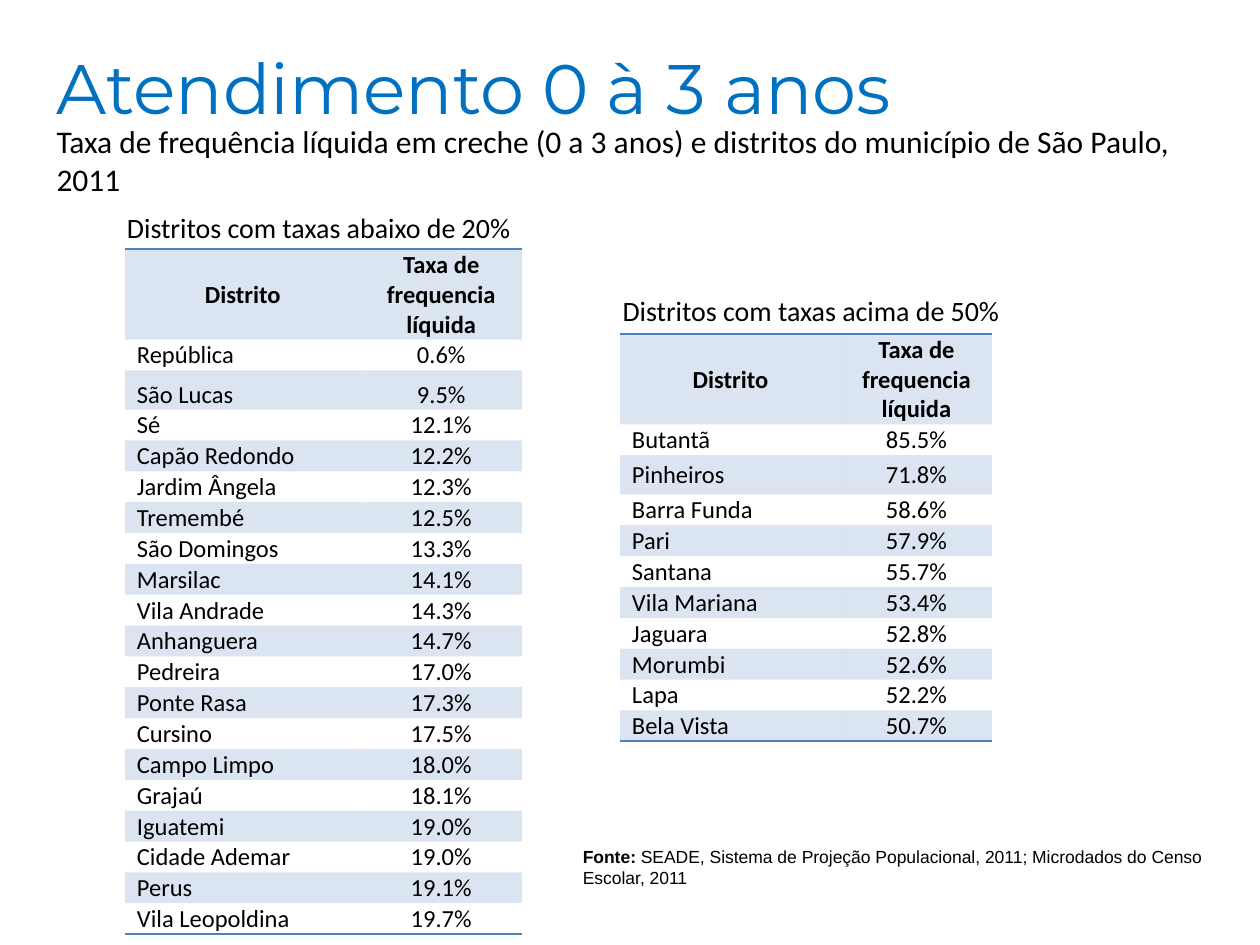
"""Build the slide on nursery attendance rates (0 to 3 years) by district of São Paulo."""
from lxml import etree
from pptx import Presentation
from pptx.dml.color import RGBColor
from pptx.enum.text import MSO_ANCHOR, MSO_AUTO_SIZE, PP_ALIGN
from pptx.oxml import parse_xml
from pptx.oxml.ns import nsdecls, qn
from pptx.util import Cm, Pt

LEFT, CENTER = PP_ALIGN.LEFT, PP_ALIGN.CENTER
MIDDLE, BOTTOM = MSO_ANCHOR.MIDDLE, MSO_ANCHOR.BOTTOM
NO_AUTOFIT = MSO_AUTO_SIZE.NONE
PLAIN_STYLE = "{2D5ABB26-0587-4C30-8999-92F81FD0307C}"
BLACK, TITLE_BLUE, TABLE_BLUE = "000000", "0070C0", "4F81BD"


def set_font(paragraph, name, size, colour, bold=False):
    font = paragraph.font
    font.name, font.size, font.bold = name, Pt(size), bold
    font.color.rgb = RGBColor.from_string(colour)


def add_label(left, top, width, height, text, name, size):
    box = slide.shapes.add_textbox(Cm(left), Cm(top), Cm(width), Cm(height))
    box.text_frame.word_wrap = True
    paragraph = box.text_frame.paragraphs[0]
    paragraph.text = text
    set_font(paragraph, name, size, BLACK)
    return box.text_frame


low_rates = [
    ("República", "0.6%"), ("São Lucas", "9.5%"), ("Sé", "12.1%"),
    ("Capão Redondo", "12.2%"), ("Jardim Ângela", "12.3%"), ("Tremembé", "12.5%"),
    ("São Domingos", "13.3%"), ("Marsilac", "14.1%"), ("Vila Andrade", "14.3%"),
    ("Anhanguera", "14.7%"), ("Pedreira", "17.0%"), ("Ponte Rasa", "17.3%"),
    ("Cursino", "17.5%"), ("Campo Limpo", "18.0%"), ("Grajaú", "18.1%"),
    ("Iguatemi", "19.0%"), ("Cidade Ademar", "19.0%"), ("Perus", "19.1%"),
    ("Vila Leopoldina", "19.7%"),
]
high_rates = [
    ("Butantã", "85.5%"), ("Pinheiros", "71.8%"), ("Barra Funda", "58.6%"),
    ("Pari", "57.9%"), ("Santana", "55.7%"), ("Vila Mariana", "53.4%"),
    ("Jaguara", "52.8%"), ("Morumbi", "52.6%"), ("Lapa", "52.2%"),
    ("Bela Vista", "50.7%"),
]
header = ("Distrito", "Taxa de frequencia líquida")
rate_tables = [
    (low_rates, 2.52, 5.02, (4.75, 3.25), 1.4, 0.58, BOTTOM),
    (high_rates, 12.5, 6.73, (4.45, 3.05), 1.27, 0.53, MIDDLE),
]

prs = Presentation()
prs.slide_width, prs.slide_height = Cm(25.4), Cm(19.05)
slide = prs.slides.add_slide(prs.slide_layouts[5])

for rates, left, top, widths, header_height, row_height, anchor in rate_tables:
    rows = [header] + rates
    heights = [header_height, row_height, 0.79] + [row_height] * (len(rows) - 3)
    table = slide.shapes.add_table(
        len(rows), 2, Cm(left), Cm(top), Cm(sum(widths)), Cm(sum(heights))).table
    table.first_row = table.horz_banding = False
    table._tbl.tblPr.find(qn("a:tableStyleId")).text = PLAIN_STYLE
    for column, width in zip(table.columns, widths):
        column.width = Cm(width)
    for r, row in enumerate(rows):
        table.rows[r].height = Cm(heights[r])
        for c, text in enumerate(row):
            is_header = r == 0
            is_name = c == 0 and not is_header
            cell = table.cell(r, c)
            cell.text = text
            cell.vertical_anchor = MIDDLE if is_header else anchor
            cell.margin_left = Cm(0.24 if is_name else 0.02)
            cell.margin_right = cell.margin_top = Cm(0.02)
            cell.margin_bottom = 0
            paragraph = cell.text_frame.paragraphs[0]
            paragraph.alignment = LEFT if is_name else CENTER
            set_font(paragraph, "Calibri", 14, BLACK, is_header)
            properties = cell._tc.get_or_add_tcPr()
            if r % 2 == 0:
                cell.fill.solid()
                cell.fill.fore_color.rgb = RGBColor.from_string(TABLE_BLUE)
                tint = properties.find(qn("a:solidFill"))[0]
                etree.SubElement(tint, qn("a:alpha")).set("val", "20000")
            else:
                cell.fill.background()
            if r in (0, len(rows) - 1):
                edge = "lnT" if is_header else "lnB"
                properties.insert(0, parse_xml(
                    f'<a:{edge} {nsdecls("a")} w="12700"><a:solidFill>'
                    f'<a:srgbClr val="{TABLE_BLUE}"/></a:solidFill></a:{edge}>'))

add_label(0.89, 2.34, 23.4, 1.8,
          "Taxa de frequência líquida em creche (0 a 3 anos) e distritos do município "
          "de São Paulo, 2011", "Calibri", 18)
source = add_label(11.5, 16.92, 13.2, 1.12, "Fonte:", "Arial", 10)
source.vertical_anchor = MIDDLE
source.paragraphs[0].runs[0].font.bold = True
source.paragraphs[0].add_run().text = (
    " SEADE, Sistema de Projeção Populacional, 2011; Microdados do Censo Escolar, 2011")
add_label(2.31, 4.11, 8.6, 0.94, "Distritos com taxas abaixo de 20%", "Calibri", 16)
add_label(12.3, 5.79, 8.6, 0.94, "Distritos com taxas acima de 50%", "Calibri", 16)

title = slide.shapes.title
title.left, title.top, title.width, title.height = Cm(0.89), Cm(0.76), Cm(22.86), Cm(1.96)
title.text_frame.text = "Atendimento 0 à 3 anos"
title.text_frame.auto_size = NO_AUTOFIT
title.text_frame.vertical_anchor = MIDDLE
title.text_frame.paragraphs[0].alignment = LEFT
set_font(title.text_frame.paragraphs[0], "Montserrat", 40, TITLE_BLUE)

prs.save("out.pptx")
